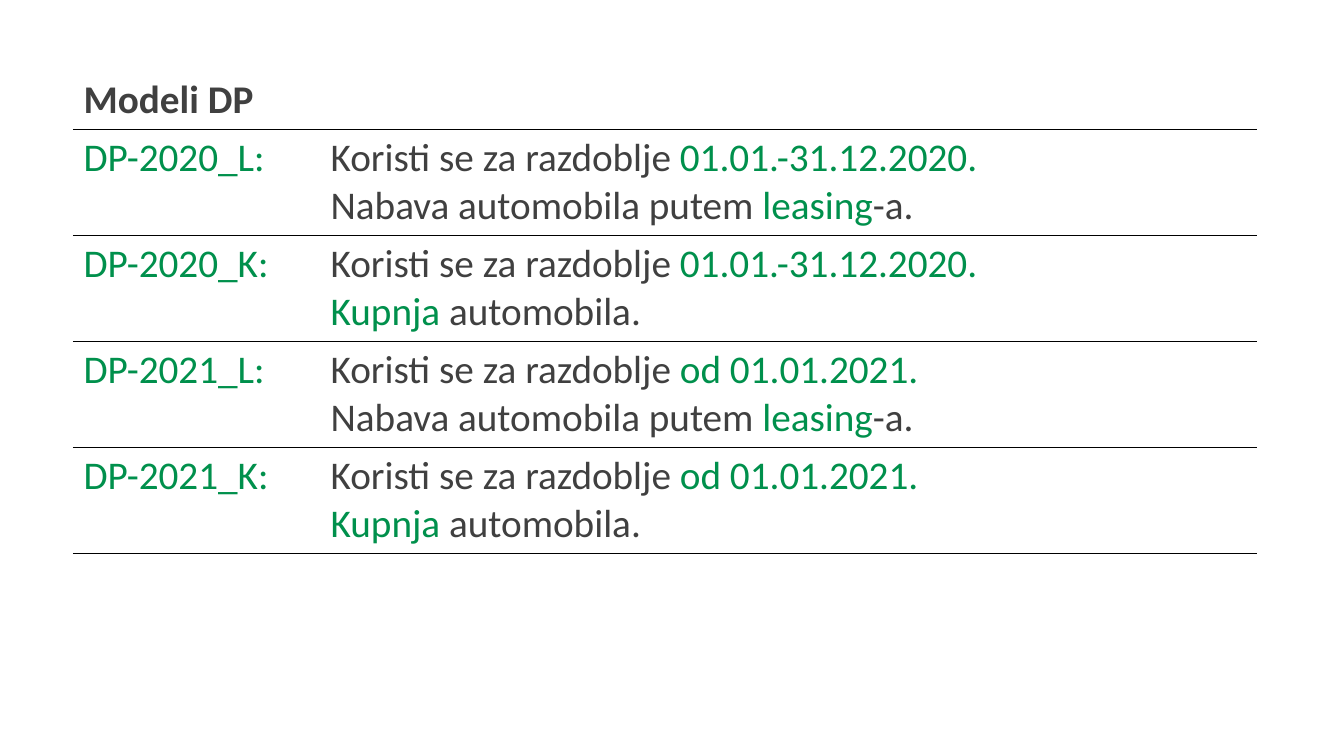
from lxml import etree
from pptx import Presentation
from pptx.dml.color import RGBColor
from pptx.enum.text import MSO_ANCHOR
from pptx.oxml.ns import qn
from pptx.util import Inches, Pt

TOP = MSO_ANCHOR.TOP
BLANK_LAYOUT = 6
COLORS = {"text": "404040", "accent": "00904C", "rule": "000000", "paper": "FFFFFF"}

LEASING = [("Nabava automobila putem ", "text"), ("leasing", "accent"), ("-a.", "text")]
PURCHASE = [("Kupnja", "accent"), (" automobila.", "text")]
PERIODS = {"2020": "01.01.-31.12.2020.", "2021": "od 01.01.2021."}
METHODS = {"L": LEASING, "K": PURCHASE}


class SlideBuilder:
    """Hold the text style and the current slide, and add its elements."""

    def __init__(self, presentation, font_name, font_size):
        self.font_name = font_name
        self.font_size = Pt(font_size)
        self.slide = presentation.slides.add_slide(presentation.slide_layouts[BLANK_LAYOUT])

    def add_table(self, left, top, column_widths, row_heights, rows):
        shape = self.slide.shapes.add_table(
            len(rows), len(column_widths), Inches(left), Inches(top),
            Inches(sum(column_widths)), Inches(sum(row_heights)))
        table = shape.table
        table.first_row = False
        table.horz_banding = False
        for column, width in zip(table.columns, column_widths):
            column.width = Inches(width)
        for row, height in zip(table.rows, row_heights):
            row.height = Inches(height)
        for row_index, row in enumerate(rows):
            for column_index, lines in enumerate(row):
                cell = table.cell(row_index, column_index)
                top_color = "rule" if row_index else "paper"
                self.add_borders(cell, {"L": "paper", "R": "paper", "T": top_color, "B": "rule"})
                cell.fill.solid()
                cell.fill.fore_color.rgb = RGBColor.from_string(COLORS["paper"])
                cell.vertical_anchor = TOP
                self.add_lines(cell.text_frame, lines, bold=row_index == 0)

    def add_lines(self, text_frame, lines, bold):
        for index, line in enumerate(lines):
            paragraph = text_frame.add_paragraph() if index else text_frame.paragraphs[0]
            for text, color in line:
                run = paragraph.add_run()
                run.text = text
                run.font.name = self.font_name
                run.font.size = self.font_size
                run.font.bold = bold
                run.font.color.rgb = RGBColor.from_string(COLORS[color])

    def add_borders(self, cell, sides):
        properties = cell._tc.get_or_add_tcPr()
        for side, color in sides.items():
            border = etree.SubElement(properties, qn(f"a:ln{side}"), w=str(Pt(1)))
            fill = etree.SubElement(border, qn("a:solidFill"))
            etree.SubElement(fill, qn("a:srgbClr"), val=COLORS[color])


def main():
    presentation = Presentation()
    presentation.slide_width = Inches(13.33)
    presentation.slide_height = Inches(7.5)
    builder = SlideBuilder(presentation, "Calibri", 28)
    rows = [[[[("Modeli DP", "text")]], []]]
    for year, period in PERIODS.items():
        for method, description in METHODS.items():
            label = [(f"DP-{year}_{method}:", "accent")]
            usage = [("Koristi se za razdoblje ", "text"), (period, "accent")]
            rows.append([[label], [usage, description]])
    row_heights = [0.57] + [1.05] * (len(rows) - 1)
    builder.add_table(0.73, 0.71, [2.45, 9.28], row_heights, rows)
    presentation.save("out.pptx")


if __name__ == "__main__":
    main()
